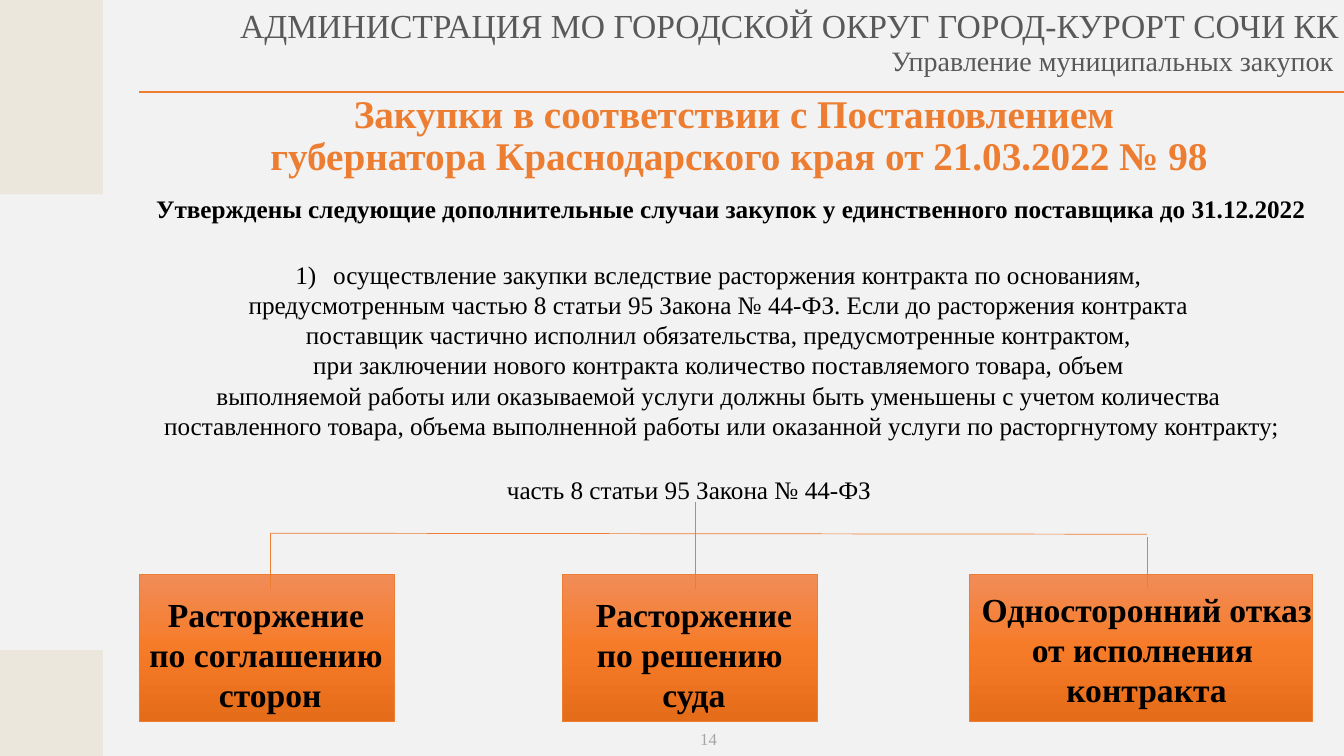
"""Build the slide on single-supplier purchases under governor's decree No. 98."""
from copy import deepcopy
from dataclasses import dataclass

from lxml import etree
from pptx import Presentation
from pptx.dml.color import RGBColor
from pptx.enum.shapes import MSO_CONNECTOR, MSO_SHAPE
from pptx.enum.text import MSO_ANCHOR, MSO_AUTO_SIZE, PP_ALIGN
from pptx.oxml.ns import qn
from pptx.util import Pt

RECT = MSO_SHAPE.RECTANGLE
STRAIGHT = MSO_CONNECTOR.STRAIGHT
TOP, MIDDLE = MSO_ANCHOR.TOP, MSO_ANCHOR.MIDDLE
NO_FIT = MSO_AUTO_SIZE.NONE
LEFT, CENTER = PP_ALIGN.LEFT, PP_ALIGN.CENTER
RIGHT, JUSTIFY = PP_ALIGN.RIGHT, PP_ALIGN.JUSTIFY

FONT = "Times New Roman"
ORANGE, BEIGE, BLACK, GREY = "ED7D31", "EBE7DC", "000000", "595959"
GRADIENT = ((0, "F18C57"), (0.5, "F67B28"), (1, "E56C19"))


@dataclass
class Box:
    left: float
    top: float
    width: float
    height: float

    def lengths(self):
        return [Pt(v) for v in (self.left, self.top, self.width, self.height)]


@dataclass
class Style:
    size: float
    color: str = BLACK
    bold: bool = False
    align: PP_ALIGN = CENTER
    spacing: float = 1.0
    wrap: bool = True


@dataclass
class Label:
    box: Box
    style: Style
    lines: list[str]


@dataclass
class Ground:
    card: Box
    label: Box
    lines: list[str]


@dataclass
class Line:
    x1: float
    y1: float
    x2: float
    y2: float
    width: float = 0.5


GROUND_STYLE = Style(24, bold=True, wrap=False)
CASE_STYLE = Style(18, wrap=False)
TITLE_STYLE = Style(28, ORANGE, bold=True, spacing=0.9)

SIDE_BLOCKS = [Box(0, 0, 73.44, 138.96), Box(0, 464.4, 73.44, 75.6)]

LABELS = [
    Label(Box(153.36, 0, 810, 36), Style(24, GREY, align=RIGHT),
          ["АДМИНИСТРАЦИЯ МО ГОРОДСКОЙ ОКРУГ ГОРОД-КУРОРТ СОЧИ КК"]),
    Label(Box(99.36, 30.24, 860.4, 33.12), Style(20, GREY, align=RIGHT, spacing=0.9),
          ["Управление муниципальных закупок"]),
    Label(Box(104.4, 134.64, 878.4, 28.8), Style(18, bold=True, align=JUSTIFY),
          ["Утверждены следующие дополнительные случаи закупок "
           "у единственного поставщика до 31.12.2022"]),
    Label(Box(354.96, 335.52, 388.08, 28.8), Style(18, align=LEFT),
          ["часть 8 статьи 95 Закона № 44-ФЗ"]),
    Label(Box(398.16, 516.96, 216, 28.8), Style(12, "A5A5A5"), ["14"]),
]

TITLE = ["Закупки в соответствии с Постановлением ",
         "губернатора Краснодарского края от 21.03.2022 № 98"]

CASE = [
    "осуществление закупки вследствие расторжения контракта по основаниям, ",
    "предусмотренным частью 8 статьи 95 Закона № 44-ФЗ. Если до расторжения контракта ",
    "поставщик частично исполнил обязательства, предусмотренные контрактом, ",
    "при заключении нового контракта количество поставляемого товара, объем ",
    "выполняемой работы или оказываемой услуги должны быть уменьшены с учетом количества ",
    "поставленного товара, объема выполненной работы или оказанной услуги "
    "по расторгнутому контракту;",
]

GROUNDS = [
    Ground(Box(99.36, 410.4, 182.16, 105.12), Box(98.64, 420.48, 188.64, 94.32),
           ["Расторжение ", "по соглашению ", "сторон"]),
    Ground(Box(401.76, 410.4, 182.16, 105.12), Box(417.6, 420.48, 156.24, 94.32),
           ["Расторжение", "по решению ", "суда"]),
    Ground(Box(692.64, 410.4, 244.8, 105.12), Box(692.64, 416.88, 252.72, 94.32),
           ["Односторонний отказ", "от исполнения ", "контракта"]),
]

LINES = [
    Line(99.36, 65.52, 960, 65.52, 1.5),
    Line(192.96, 380.88, 819.36, 381.6),
    Line(496.8, 358.56, 496.8, 380.88),
    Line(192.96, 380.88, 192.96, 420.48),
    Line(496.8, 380.88, 496.8, 420.48),
    Line(819.36, 383.76, 819.36, 419.76),
]


def rgb(color: str) -> RGBColor:
    return RGBColor.from_string(color)


def add_run(p, text: str, style: Style) -> None:
    r = p.add_run()
    r.text = text
    r.font.name, r.font.size, r.font.bold = FONT, Pt(style.size), style.bold
    r.font.color.rgb = rgb(style.color)


def setup_paragraph(p, style: Style) -> None:
    p.alignment, p.line_spacing = style.align, style.spacing
    p.space_before = p.space_after = Pt(0)


def write(tf, lines: list[str], style: Style) -> None:
    tf.word_wrap, tf.auto_size = style.wrap, NO_FIT
    for i, text in enumerate(lines):
        p = tf.paragraphs[0] if i == 0 else tf.add_paragraph()
        setup_paragraph(p, style)
        add_run(p, text, style)


def place(sp, box: Box) -> None:
    sp.left, sp.top, sp.width, sp.height = box.lengths()


def add_label(s, label: Label) -> None:
    tf = s.shapes.add_textbox(*label.box.lengths()).text_frame
    write(tf, label.lines, label.style)


def add_rect(s, box: Box):
    sp = s.shapes.add_shape(RECT, *box.lengths())
    sp.shadow.inherit = False
    return sp


def add_side_block(s, box: Box) -> None:
    sp = add_rect(s, box)
    sp.fill.solid()
    sp.fill.fore_color.rgb = rgb(BEIGE)
    sp.line.fill.background()


def add_card(s, box: Box) -> None:
    sp = add_rect(s, box)
    sp.fill.gradient()
    sp.fill.gradient_angle = 270
    first = sp._element.spPr.find(".//" + qn("a:gs"))
    first.addnext(deepcopy(first))
    for stop, (position, color) in zip(sp.fill.gradient_stops, GRADIENT):
        stop.position = position
        stop.color.rgb = rgb(color)
    sp.line.color.rgb, sp.line.width = rgb(ORANGE), Pt(0.5)


def add_line(s, line: Line) -> None:
    ends = [Pt(v) for v in (line.x1, line.y1, line.x2, line.y2)]
    cxn = s.shapes.add_connector(STRAIGHT, *ends)
    cxn.line.color.rgb, cxn.line.width = rgb(ORANGE), Pt(line.width)
    etree.SubElement(cxn._element.spPr, qn("a:effectLst"))


def fill_title(sp) -> None:
    place(sp, Box(113.76, 52.56, 828, 90.72))
    tf = sp.text_frame
    tf.word_wrap, tf.auto_size, tf.vertical_anchor = True, NO_FIT, MIDDLE
    p = tf.paragraphs[0]
    setup_paragraph(p, TITLE_STYLE)
    add_run(p, TITLE[0], TITLE_STYLE)
    p.add_line_break()
    add_run(p, TITLE[1], TITLE_STYLE)


def fill_case(sp) -> None:
    place(sp, Box(105.84, 181.44, 819.36, 138.24))
    sp.text_frame.vertical_anchor = TOP
    write(sp.text_frame, CASE, CASE_STYLE)
    for i, p in enumerate(sp.text_frame.paragraphs):
        pPr = p._p.get_or_add_pPr()
        indent = Pt(27) if i == 0 else 0
        pPr.set("marL", str(indent))
        pPr.set("indent", str(-indent))
        if i == 0:
            etree.SubElement(pPr, qn("a:buAutoNum"), type="arabicParenR")
        else:
            etree.SubElement(pPr, qn("a:buNone"))


def main() -> None:
    prs = Presentation()
    prs.slide_width, prs.slide_height = Pt(960), Pt(540)
    s = prs.slides.add_slide(prs.slide_layouts[1])
    s.background.fill.solid()
    s.background.fill.fore_color.rgb = rgb("F2F2F2")
    for box in SIDE_BLOCKS:
        add_side_block(s, box)
    fill_title(s.shapes.title)
    fill_case(s.placeholders[1])
    for label in LABELS:
        add_label(s, label)
    for ground in GROUNDS:
        add_card(s, ground.card)
        add_label(s, Label(ground.label, GROUND_STYLE, ground.lines))
    for line in LINES:
        add_line(s, line)
    prs.save("out.pptx")


if __name__ == "__main__":
    main()
